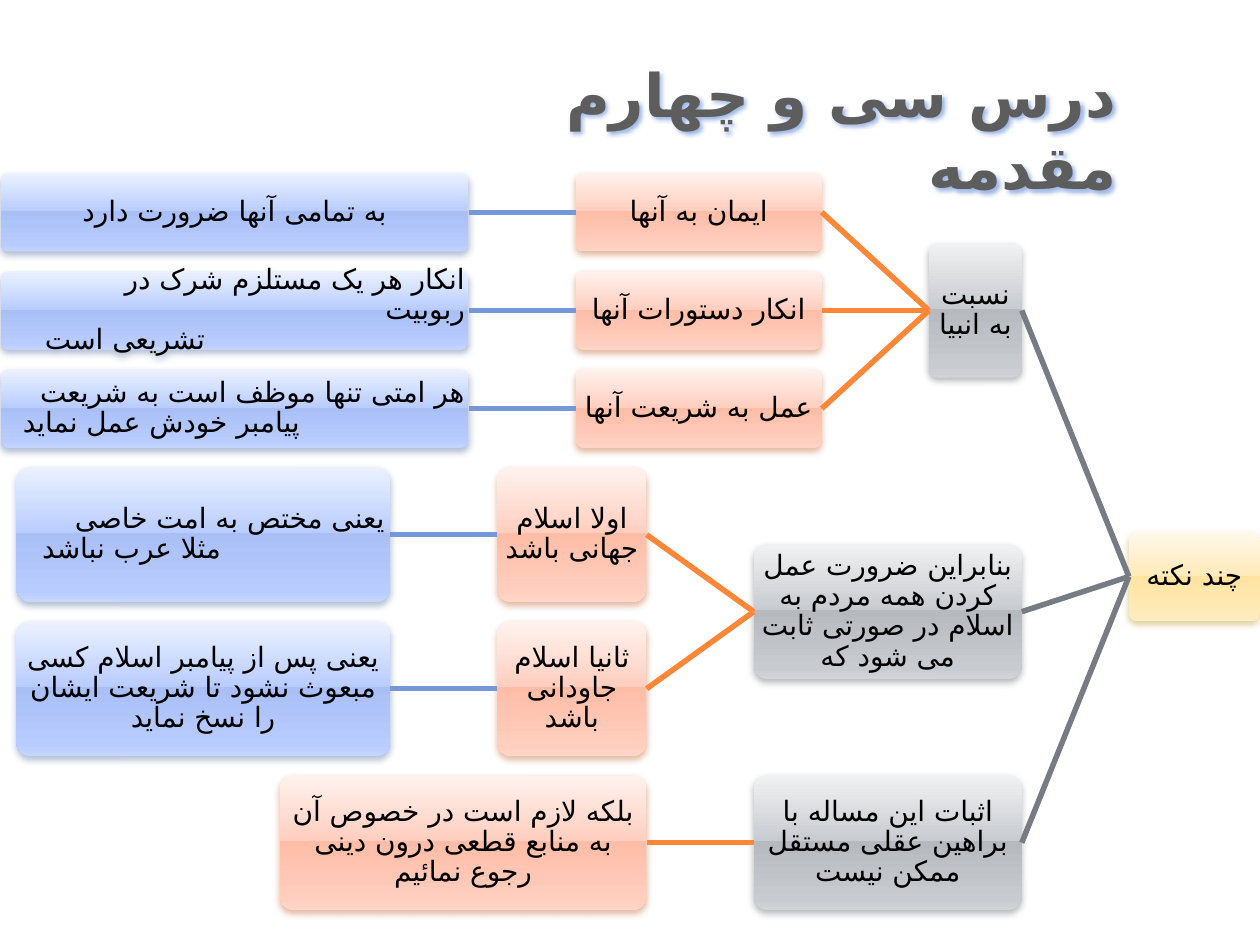
"""Build the lesson slide: a right-to-left tree of points about the prophets."""
from dataclasses import dataclass
from typing import Optional

from lxml.etree import SubElement
from pptx import Presentation
from pptx.dml.color import RGBColor
from pptx.enum.shapes import MSO_CONNECTOR as Connector, MSO_SHAPE as Preset
from pptx.enum.text import MSO_ANCHOR as Anchor, PP_ALIGN as Align
from pptx.oxml.ns import qn
from pptx.util import Pt


@dataclass(frozen=True)
class Palette:
    stops: tuple[str, ...]
    shadow: str
    line: str


@dataclass(frozen=True)
class Theme:
    font: str = "Karla"
    arabic_font: str = "DejaVu Sans"
    title_size: float = 34.2
    node_size: float = 16
    title_color: str = "5D5D5D"
    title_shadow: str = "7598D9"
    node_color: str = "000000"
    line_width: float = 3.15
    positions: tuple[int, ...] = (0, 49, 49, 92, 100)
    levels: tuple[Palette, ...] = (
        Palette(("FFF9EC", "FFEAB9", "FFE3A0", "FFEAB9", "FFEDC5"), "AC8900", "777C84"),
        Palette(("F0F1F2", "C8CBCF", "B6B9BE", "C8CBCF", "D1D3D7"), "454950", "777C84"),
        Palette(("FFF2EE", "FFCEBF", "FFBDA7", "FFCEBF", "FFD6C9"), "B44903", "FE8637"),
        Palette(("EBF1FF", "B8CCFF", "A9BFF6", "B8CCFF", "C5D5FD"), "37568F", "7598D9"),
    )


@dataclass(frozen=True)
class Node:
    text: str
    width: float
    height: float
    children: tuple["Node", ...] = ()
    left_inset: float = 0.8


THEME = Theme()
SLIDE_WIDTH, SLIDE_HEIGHT = 720, 540
TREE_TOP = 98.9
LEVEL_GAP, ROW_GAP = 61.2, 11.3
SHORT, TALL = 44.8, 76.7
RELATION, POINT = 53.1, 153.2
ATTITUDE, CONDITION = 140.6, 85.4
RULING, MEANING = 267.4, 213.7

TREE = Node("چند نکته", 74.9, 51, (
    Node("نسبت به انبیا", RELATION, TALL, (
        Node("ایمان به آنها", ATTITUDE, SHORT, (
            Node("به تمامی آنها ضرورت دارد", RULING, SHORT),)),
        Node("انکار دستورات آنها", ATTITUDE, SHORT, (
            Node("انکار هر یک مستلزم شرک در ربوبیت\nتشریعی است", RULING, SHORT,
                 left_inset=24),)),
        Node("عمل به شریعت آنها", ATTITUDE, SHORT, (
            Node("هر امتی تنها موظف است به شریعت\nپیامبر خودش عمل نماید", RULING, SHORT,
                 left_inset=11.4),)),
    )),
    Node("بنابراین ضرورت عمل کردن همه مردم به اسلام در صورتی ثابت می شود که", POINT, TALL, (
        Node("اولا اسلام جهانی باشد", CONDITION, TALL, (
            Node("یعنی مختص به امت خاصی\nمثلا عرب نباشد", MEANING, TALL, left_inset=12.7),)),
        Node("ثانیا اسلام جاودانی باشد", CONDITION, TALL, (
            Node("یعنی پس از پیامبر اسلام کسی مبعوث نشود تا شریعت ایشان را نسخ نماید",
                 MEANING, TALL),)),
    )),
    Node("اثبات این مساله با براهین عقلی مستقل ممکن نیست", POINT, TALL, (
        Node("بلکه لازم است در خصوص آن به منابع قطعی درون دینی رجوع نمائیم", 209.6, TALL),
    )),
))


def add_color(parent, color: str, alpha: Optional[int] = None) -> None:
    rgb = SubElement(parent, qn("a:srgbClr"), val=color)
    if alpha is not None:
        SubElement(rgb, qn("a:alpha"), val=str(alpha * 1000))


def set_shadow(shape, color: str, alpha: int, blur: float, distance: float, angle: int) -> None:
    shape.shadow.inherit = False
    effects = shape._element.spPr.find(qn("a:effectLst"))
    outer = SubElement(effects, qn("a:outerShdw"), blurRad=str(Pt(blur)), dist=str(Pt(distance)),
                       dir=str(angle * 60000), algn="ctr", rotWithShape="0")
    add_color(outer, color, alpha)


def set_gradient(shape, colors: tuple[str, ...]) -> None:
    shape.fill.gradient()
    shape.fill.gradient_angle = 270
    stops = shape._element.spPr.find(f".//{qn('a:gsLst')}")
    for stop in list(stops):
        stops.remove(stop)
    for position, color in zip(THEME.positions, colors):
        add_color(SubElement(stops, qn("a:gs"), pos=str(position * 1000)), color)


def write_text(shape, text: str, align, anchor, size: float, color: str,
               inset: tuple[float, float], bold: bool = False) -> None:
    frame = shape.text_frame
    frame.text = text
    frame.word_wrap = True
    frame.vertical_anchor = anchor
    frame.margin_left = frame.margin_right = Pt(inset[0])
    frame.margin_top = frame.margin_bottom = Pt(inset[1])
    for paragraph in frame.paragraphs:
        paragraph.alignment = align
        paragraph._p.get_or_add_pPr().set("rtl", "1")
        for run in paragraph.runs:
            run.font.size = Pt(size)
            run.font.bold = bold
            run.font.name = THEME.font
            run.font.color.rgb = RGBColor.from_string(color)
            SubElement(run._r.get_or_add_rPr(), qn("a:cs"), typeface=THEME.arabic_font)


def add_title(slide, text: str) -> None:
    title = slide.shapes.add_textbox(Pt(71.3), Pt(25.2), Pt(570.2), Pt(90))
    write_text(title, text, Align.RIGHT, Anchor.BOTTOM, THEME.title_size,
               THEME.title_color, (3.6, 0), bold=True)
    set_shadow(title, THEME.title_shadow, 70, 2, 1, 45)


def add_box(slide, node: Node, right: float, middle: float, palette: Palette):
    box = slide.shapes.add_shape(Preset.ROUNDED_RECTANGLE, Pt(right - node.width),
                                 Pt(middle - node.height / 2), Pt(node.width), Pt(node.height))
    box.adjustments[0] = 0.1
    set_gradient(box, palette.stops)
    box.line.fill.background()
    set_shadow(box, palette.shadow, 38, 4, 2, 90)
    write_text(box, node.text, Align.CENTER, Anchor.MIDDLE, THEME.node_size,
               THEME.node_color, (0.8, 0.8))
    box.text_frame.margin_left = Pt(node.left_inset)
    paragraphs = box.text_frame.paragraphs
    for paragraph in paragraphs:
        paragraph.line_spacing = 0.9
    if len(paragraphs) == 2:
        paragraphs[0].alignment, paragraphs[1].alignment = Align.RIGHT, Align.LEFT
    return box


def add_branch(slide, parent, child, color: str) -> None:
    branch = slide.shapes.add_connector(Connector.STRAIGHT, 0, 0, 0, 0)
    branch.begin_connect(parent, 1)
    branch.end_connect(child, 3)
    branch.line.color.rgb = RGBColor.from_string(color)
    branch.line.width = Pt(THEME.line_width)
    SubElement(branch._element.spPr, qn("a:effectLst"))


def draw_tree(slide, node: Node, right: float, top: float, level: int = 0):
    palette = THEME.levels[level]
    child_boxes, middles, next_top = [], [], top
    for child in node.children:
        child_box, middle, next_top = draw_tree(
            slide, child, right - node.width - LEVEL_GAP, next_top, level + 1)
        child_boxes.append(child_box)
        middles.append(middle)
    if middles:
        middle = (middles[0] + middles[-1]) / 2
    else:
        middle, next_top = top + node.height / 2, top + node.height + ROW_GAP
    box = add_box(slide, node, right, middle, palette)
    for child_box in child_boxes:
        add_branch(slide, box, child_box, THEME.levels[level + 1].line)
    return box, middle, next_top


def main() -> None:
    presentation = Presentation()
    presentation.slide_width, presentation.slide_height = Pt(SLIDE_WIDTH), Pt(SLIDE_HEIGHT)
    slide = presentation.slides.add_slide(presentation.slide_layouts[6])
    add_title(slide, "درس سی و چهارم\vمقدمه")
    draw_tree(slide, TREE, SLIDE_WIDTH, TREE_TOP)
    presentation.save("out.pptx")


if __name__ == "__main__":
    main()
